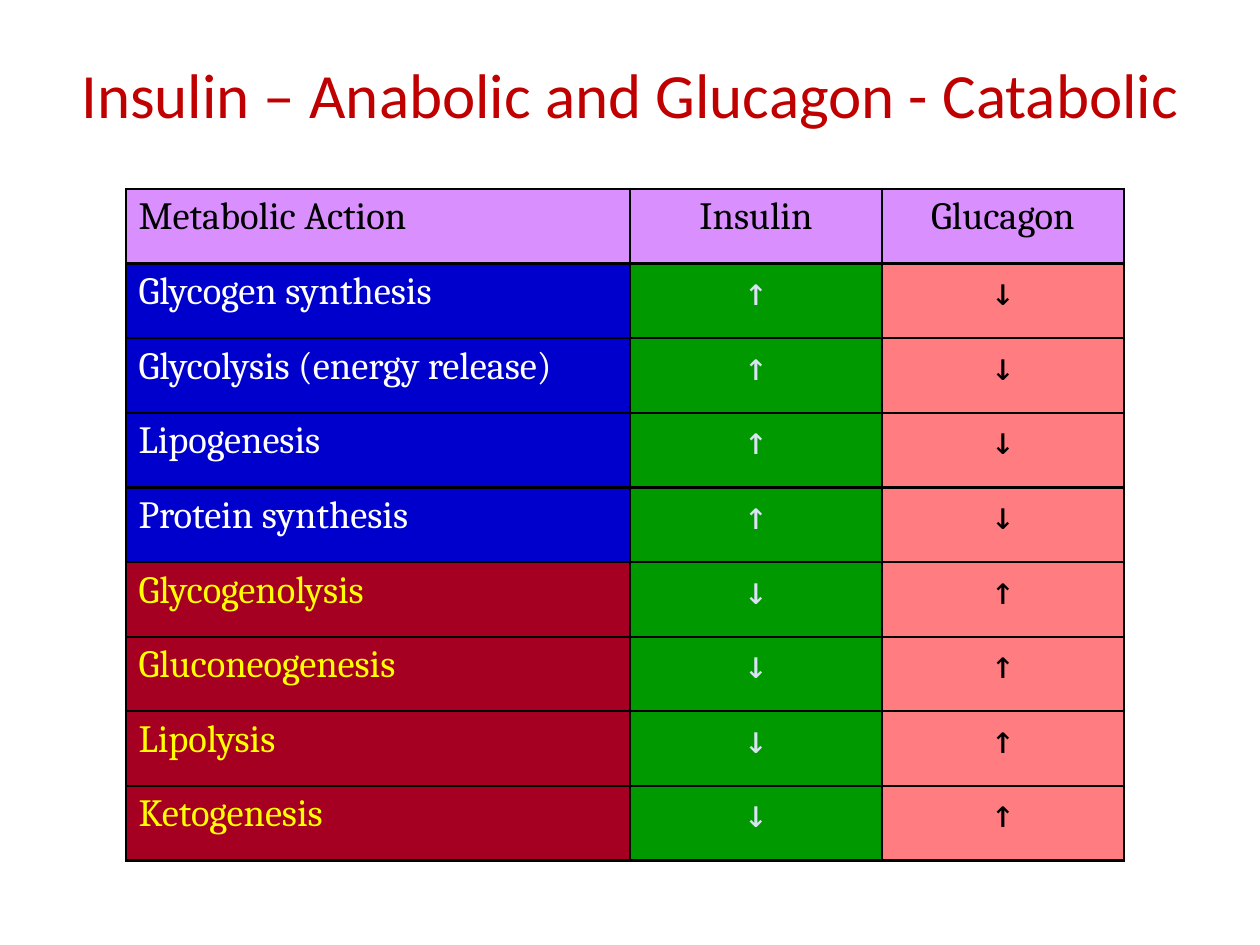
"""Build a slide comparing the metabolic actions of insulin and glucagon."""
from dataclasses import dataclass

import pptx
import pptx.dml.color
import pptx.enum.text
import pptx.oxml
import pptx.oxml.ns
import pptx.util

ALIGN = pptx.enum.text.PP_ALIGN
INCH = pptx.util.Inches
COLS = (4, 2, 1.92)
ROW = 5.33 / 9
UP, DOWN = "↑", "↓"


@dataclass(frozen=True)
class Style:
    fill: str
    ink: str
    font: str = "Cambria"


HEAD = Style("DA8FFF", "000000")
BUILD = Style("0000CC", "FFFFFF")
BREAK = Style("A50021", "FFFF00")
RISE = Style("009900", "DAE3F3", "DejaVu Sans Mono")
FALL = Style("FF7C80", "000000", "DejaVu Sans Mono")

GROUPS = (
    (("Glycogen synthesis", "Glycolysis (energy release)", "Lipogenesis",
      "Protein synthesis"), BUILD, UP, DOWN),
    (("Glycogenolysis", "Gluconeogenesis", "Lipolysis", "Ketogenesis"),
     BREAK, DOWN, UP),
)


def paint(color, code: str) -> None:
    color.rgb = pptx.dml.color.RGBColor.from_string(code)


def write(frame, text: str, size: float, style: Style, align) -> None:
    frame.text = text
    para = frame.paragraphs[0]
    para.alignment = align
    font = para.runs[0].font
    font.size = pptx.util.Pt(size)
    font.name = style.font
    paint(font.color, style.ink)


def edge(cell) -> None:
    props = cell._tc.get_or_add_tcPr()
    for i, side in enumerate("LRTB"):
        props.insert(i, pptx.oxml.parse_xml(
            f'<a:ln{side} {pptx.oxml.ns.nsdecls("a")} w="19050"><a:solidFill>'
            f'<a:srgbClr val="000000"/></a:solidFill></a:ln{side}>'))


def draw_cell(cell, text: str, style: Style, align) -> None:
    cell.fill.solid()
    paint(cell.fill.fore_color, style.fill)
    write(cell.text_frame, text, 22, style, align)
    edge(cell)


def draw_title(slide) -> None:
    title = slide.shapes.title
    title.left, title.top = INCH(0.5), INCH(0.3)
    title.width, title.height = INCH(9), INCH(0.95)
    frame = title.text_frame
    frame.vertical_anchor = pptx.enum.text.MSO_ANCHOR.MIDDLE
    write(frame, "Insulin – Anabolic and Glucagon - Catabolic", 36,
          Style("FFFFFF", "C00000", "Calibri"), ALIGN.CENTER)
    frame.paragraphs[0].line_spacing = 0.9


def draw_table(slide) -> None:
    rows = [(("Metabolic Action", "Insulin", "Glucagon"), (HEAD,) * 3)]
    for names, style, left, right in GROUPS:
        rows += [((name, left, right), (style, RISE, FALL)) for name in names]
    table = slide.shapes.add_table(
        len(rows), len(COLS), INCH(1), INCH(1.5), INCH(sum(COLS)),
        INCH(ROW * len(rows))).table
    for col, width in zip(table.columns, COLS):
        col.width = INCH(width)
    for r, (texts, styles) in enumerate(rows):
        table.rows[r].height = INCH(ROW)
        for c, (text, style) in enumerate(zip(texts, styles)):
            draw_cell(table.cell(r, c), text, style,
                      ALIGN.CENTER if c else ALIGN.LEFT)


def main() -> None:
    deck = pptx.Presentation()
    deck.slide_width, deck.slide_height = INCH(10), INCH(7.5)
    slide = deck.slides.add_slide(deck.slide_layouts[5])
    draw_title(slide)
    draw_table(slide)
    deck.save("out.pptx")


if __name__ == "__main__":
    main()
